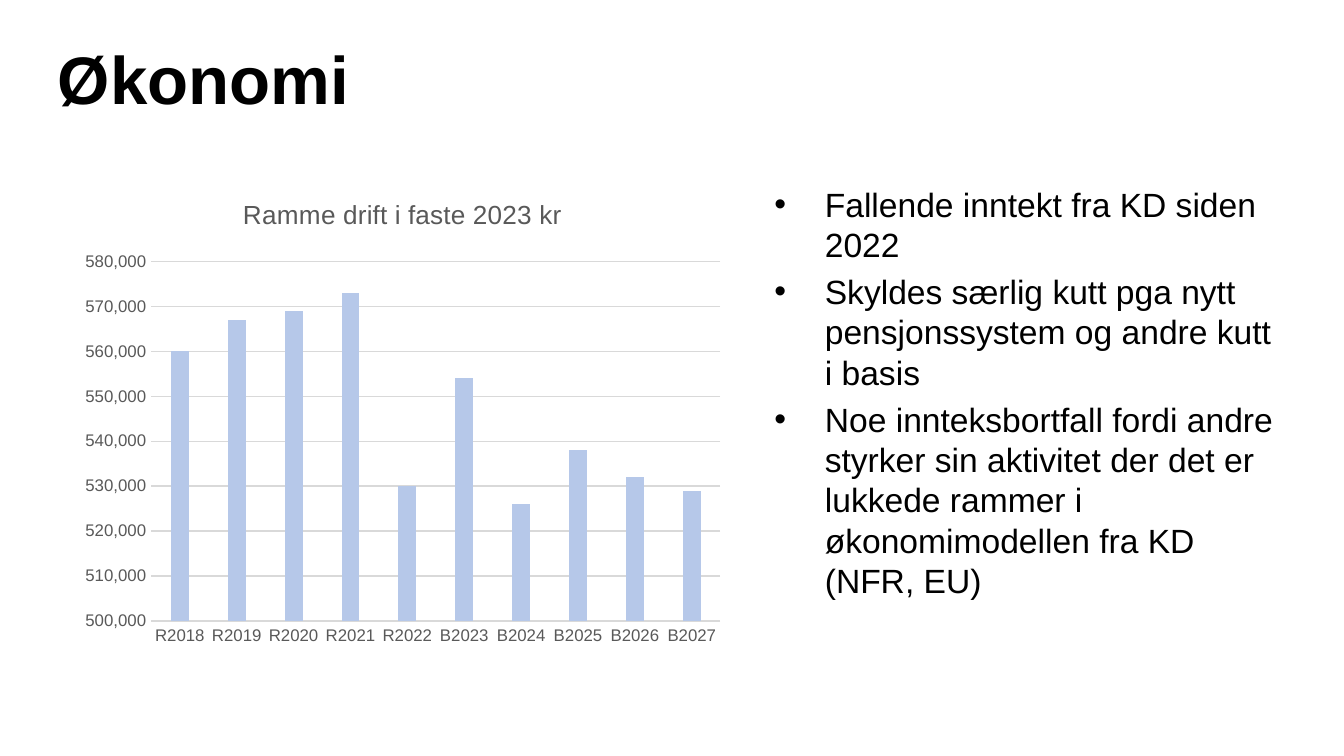
from lxml.etree import SubElement
from pptx import Presentation
from pptx.chart.data import CategoryChartData
from pptx.dml.color import RGBColor
from pptx.enum.chart import XL_CHART_TYPE, XL_TICK_MARK
from pptx.enum.text import MSO_ANCHOR, PP_ALIGN
from pptx.oxml.ns import qn
from pptx.util import Pt

TITLE = "Økonomi"
POINTS = [
    "Fallende inntekt fra KD siden 2022",
    "Skyldes særlig kutt pga nytt pensjonssystem og andre kutt i basis",
    "Noe innteksbortfall fordi andre styrker sin aktivitet der det er "
    "lukkede rammer i økonomimodellen fra KD (NFR, EU)",
]
CHART_TITLE = "Ramme drift i faste 2023 kr"
BUDGET = {
    "R2018": 560000, "R2019": 567000, "R2020": 569000, "R2021": 573000,
    "R2022": 530000, "B2023": 554000, "B2024": 526000, "B2025": 538000,
    "B2026": 532000, "B2027": 529000,
}
PLOT_AREA = {"x": 0.126, "y": 0.172, "w": 0.847, "h": 0.721}
THEME = {
    "font": "Arial",
    "text": RGBColor(0, 0, 0),
    "muted": RGBColor(0x59, 0x59, 0x59),
    "grid": RGBColor(0xD9, 0xD9, 0xD9),
    "bar": RGBColor(0xB6, 0xC8, 0xE9),
    "title": 36, "body": 18, "chart_title": 14, "chart": 10, "axis": 9,
}
CONTENT_TOP, CONTENT_HEIGHT = 94.3, 267


def style(font, size, color, bold=False):
    font.name = THEME["font"]
    font.size = Pt(THEME[size])
    font.color.rgb = THEME[color]
    font.bold = bold


def style_line(line):
    line.color.rgb = THEME["grid"]
    line.width = Pt(0.75)


def place(shape, left, top, width, height):
    shape.left, shape.top = Pt(left), Pt(top)
    shape.width, shape.height = Pt(width), Pt(height)


def add_title(slide):
    title = slide.shapes.title
    place(title, 23.8, 16.6, 671, 51.1)
    frame = title.text_frame
    frame.vertical_anchor = MSO_ANCHOR.BOTTOM
    frame.margin_bottom = Pt(4.7)
    paragraph = frame.paragraphs[0]
    paragraph.alignment = PP_ALIGN.LEFT
    run = paragraph.add_run()
    run.text = TITLE
    style(run.font, "title", "text", bold=True)


def add_points(slide):
    box = slide.shapes.add_textbox(
        Pt(407.8), Pt(CONTENT_TOP), Pt(287.3), Pt(CONTENT_HEIGHT))
    frame = box.text_frame
    frame.word_wrap = True
    frame.margin_top = Pt(4)
    for index, point in enumerate(POINTS):
        paragraph = frame.add_paragraph() if index else frame.paragraphs[0]
        properties = paragraph._p.get_or_add_pPr()
        properties.set("marL", str(Pt(27)))
        properties.set("indent", str(-Pt(27)))
        SubElement(properties, qn("a:buFont"), typeface=THEME["font"])
        SubElement(properties, qn("a:buChar"), char="•")
        paragraph.space_before = Pt(3.6 if index else 0)
        run = paragraph.add_run()
        run.text = point
        style(run.font, "body", "text")


def fix_plot_area(chart):
    """Pin the inner plot area to fractions of the chart frame."""
    plot_area = chart._chartSpace.chart.plotArea
    layout = plot_area.find(qn("c:layout"))
    if layout is None:
        layout = SubElement(plot_area, qn("c:layout"))
        plot_area.insert(0, layout)
    manual = SubElement(layout, qn("c:manualLayout"))
    settings = {"layoutTarget": "inner", "xMode": "edge", "yMode": "edge", **PLOT_AREA}
    for name, value in settings.items():
        SubElement(manual, qn(f"c:{name}"), val=str(value))


def add_budget_chart(slide):
    data = CategoryChartData(number_format="#,##0")
    data.categories = list(BUDGET)
    data.add_series(CHART_TITLE, list(BUDGET.values()))
    chart = slide.shapes.add_chart(
        XL_CHART_TYPE.COLUMN_CLUSTERED, Pt(35.8), Pt(CONTENT_TOP),
        Pt(359.8), Pt(CONTENT_HEIGHT), data).chart
    style(chart.font, "chart", "text")
    chart.has_legend = False
    chart.has_title = True
    run = chart.chart_title.text_frame.paragraphs[0].add_run()
    run.text = CHART_TITLE
    style(run.font, "chart_title", "muted")
    chart.chart_title.include_in_layout = False

    plot = chart.plots[0]
    plot.gap_width, plot.overlap = 219, -27
    plot.vary_by_categories = False
    fill = plot.series[0].format.fill
    fill.solid()
    fill.fore_color.rgb = THEME["bar"]

    years, amounts = chart.category_axis, chart.value_axis
    for axis in (years, amounts):
        axis.major_tick_mark = axis.minor_tick_mark = XL_TICK_MARK.NONE
        style(axis.tick_labels.font, "axis", "muted")
    style_line(years.format.line)
    amounts.format.line.fill.background()
    amounts.minimum_scale, amounts.maximum_scale = 500000, 580000
    amounts.major_unit = 10000
    amounts.tick_labels.number_format = "#,##0"
    amounts.tick_labels.number_format_is_linked = False
    style_line(amounts.major_gridlines.format.line)
    fix_plot_area(chart)


def main():
    deck = Presentation()
    deck.slide_width, deck.slide_height = Pt(720), Pt(405)
    slide = deck.slides.add_slide(deck.slide_layouts[5])
    add_title(slide)
    add_points(slide)
    add_budget_chart(slide)
    deck.save("out.pptx")


if __name__ == "__main__":
    main()
